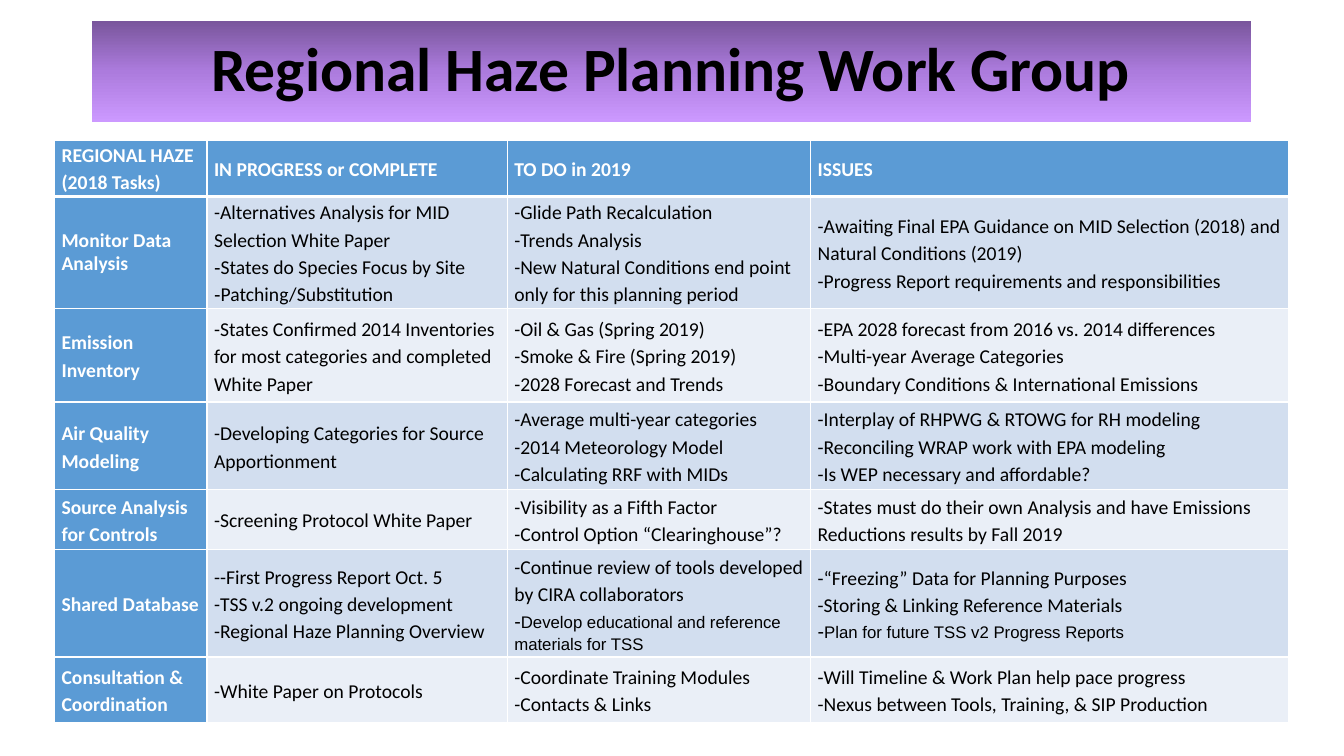
from copy import deepcopy

from lxml.etree import SubElement
from pptx import Presentation
from pptx.dml.color import RGBColor
from pptx.enum.text import MSO_ANCHOR as Anchor, MSO_AUTO_SIZE as Fit, PP_ALIGN as Align
from pptx.oxml.ns import qn
from pptx.util import Pt

TITLE = "Regional Haze Planning Work Group"
BANNER = [(0, "79569C"), (0.5, "AC7BDD"), (1, "CC99FF")]

# A line is a string, or a list of (text, font, size) runs.
DASH = ("-", "Arial", 14)
HEAD = ["REGIONAL HAZE (2018 Tasks)", "IN PROGRESS or COMPLETE", "TO DO in 2019", "ISSUES"]
TASKS = [
    ("Monitor Data Analysis",
     ["-Alternatives Analysis for MID Selection White Paper",
      [DASH, ("States do Species Focus by Site", "Calibri", 14)],
      [DASH, ("Patching/Substitution", "Calibri", 14)]],
     ["-Glide Path Recalculation",
      "-Trends Analysis",
      "-New Natural Conditions end point only for this planning period"],
     ["-Awaiting Final EPA Guidance on MID Selection (2018) and Natural Conditions (2019)",
      "-Progress Report requirements and responsibilities"]),
    ("Emission Inventory",
     ["-States Confirmed 2014 Inventories for most categories and completed White Paper"],
     ["-Oil & Gas (Spring 2019)",
      "-Smoke & Fire (Spring 2019)",
      "-2028 Forecast and Trends"],
     ["-EPA 2028 forecast from 2016 vs. 2014 differences",
      "-Multi-year Average Categories",
      "-Boundary Conditions & International Emissions"]),
    ("Air Quality Modeling",
     ["-Developing Categories for Source Apportionment"],
     ["-Average multi-year categories",
      "-2014 Meteorology Model",
      "-Calculating RRF with MIDs"],
     ["-Interplay of RHPWG & RTOWG for RH modeling",
      "-Reconciling WRAP work with EPA modeling",
      "-Is WEP necessary and affordable?"]),
    ("Source Analysis for Controls",
     ["-Screening Protocol White Paper"],
     ["-Visibility as a Fifth Factor",
      "-Control Option “Clearinghouse”?"],
     ["-States must do their own Analysis and have Emissions Reductions results by Fall 2019"]),
    ("Shared Database",
     ["--First Progress Report Oct. 5",
      "-TSS v.2 ongoing development",
      "-Regional Haze Planning Overview"],
     ["-Continue review of tools developed by CIRA collaborators",
      [DASH, ("Develop educational and reference materials for TSS", "Arial", 12)]],
     ["-“Freezing” Data for Planning Purposes",
      "-Storing & Linking Reference Materials",
      [DASH, ("Plan for future TSS v2 Progress Reports", "Arial", 12)]]),
    ("Consultation & Coordination",
     ["-White Paper on Protocols"],
     ["-Coordinate Training Modules",
      "-Contacts & Links"],
     ["-Will Timeline & Work Plan help pace progress",
      "-Nexus between Tools, Training, & SIP Production"]),
]
WIDTHS = [108.9, 214.5, 216.7, 341.3]
HEIGHTS = [40.3, 79.9, 67, 62.6, 42.5, 77, 46.8]
BLUE, BANDS = "5B9BD5", ["EAEFF7", "D2DEEF"]
WHITE, BLACK = "FFFFFF", "000000"


def color(code):
    return RGBColor.from_string(code)


def add_run(para, text, font, size, ink, bold):
    run = para.add_run()
    run.text = text
    run.font.name, run.font.size, run.font.bold = font, Pt(size), bold
    run.font.color.rgb = color(ink)


def add_title(slide):
    title = slide.shapes.title
    title.left, title.top, title.width, title.height = Pt(65.5), Pt(15), Pt(828), Pt(72)
    title.fill.gradient()
    title.fill.gradient_angle = 270
    stops = title.element.spPr.find(".//" + qn("a:gsLst"))
    stops.append(deepcopy(stops[0]))
    for stop, (place, code) in zip(title.fill.gradient_stops, BANNER):
        stop.position, stop.color.rgb = place, color(code)
    frame = title.text_frame
    frame.auto_size, frame.word_wrap = Fit.NONE, True
    frame.vertical_anchor = Anchor.MIDDLE
    para = frame.paragraphs[0]
    para.alignment, para.line_spacing = Align.CENTER, 0.9
    add_run(para, TITLE, "Calibri", 44, BLACK, True)


def add_edges(cell, base):
    """Draw white cell borders, the bottom one base points wide."""
    props = cell._tc.get_or_add_tcPr()
    for side, width in (("L", 1), ("R", 1), ("T", 1), ("B", base)):
        line = SubElement(props, qn("a:ln" + side), w=str(Pt(width)))
        fill = SubElement(line, qn("a:solidFill"))
        SubElement(fill, qn("a:srgbClr"), val=WHITE)


def fill_cell(cell, lines, row, col):
    label = row == 0 or col == 0
    add_edges(cell, 3 if row == 0 else 1)
    cell.fill.solid()
    cell.fill.fore_color.rgb = color(BLUE if label else BANDS[row % 2])
    cell.margin_left = cell.margin_right = Pt(5)
    cell.margin_top = cell.margin_bottom = 0
    cell.vertical_anchor = Anchor.MIDDLE if row or col else Anchor.TOP
    frame = cell.text_frame
    for i, line in enumerate(lines):
        para = frame.add_paragraph() if i else frame.paragraphs[0]
        para.line_spacing = 1.0 if (row, col) == (1, 0) else 1.15
        runs = [(line, "Calibri", 14)] if isinstance(line, str) else line
        for text, font, size in runs:
            add_run(para, text, font, size, WHITE if label else BLACK, label)


def add_grid(slide):
    rows = [HEAD] + TASKS
    table = slide.shapes.add_table(len(rows), len(WIDTHS), Pt(39), Pt(100),
                                   Pt(sum(WIDTHS)), Pt(sum(HEIGHTS))).table
    for column, width in zip(table.columns, WIDTHS):
        column.width = Pt(width)
    for r, (row, height) in enumerate(zip(rows, HEIGHTS)):
        table.rows[r].height = Pt(height)
        for c, entry in enumerate(row):
            lines = [entry] if isinstance(entry, str) else entry
            fill_cell(table.cell(r, c), lines, r, c)


def main():
    deck = Presentation()
    deck.slide_width, deck.slide_height = Pt(960), Pt(540)
    slide = deck.slides.add_slide(deck.slide_layouts[5])
    add_title(slide)
    add_grid(slide)
    deck.save("out.pptx")


if __name__ == "__main__":
    main()
